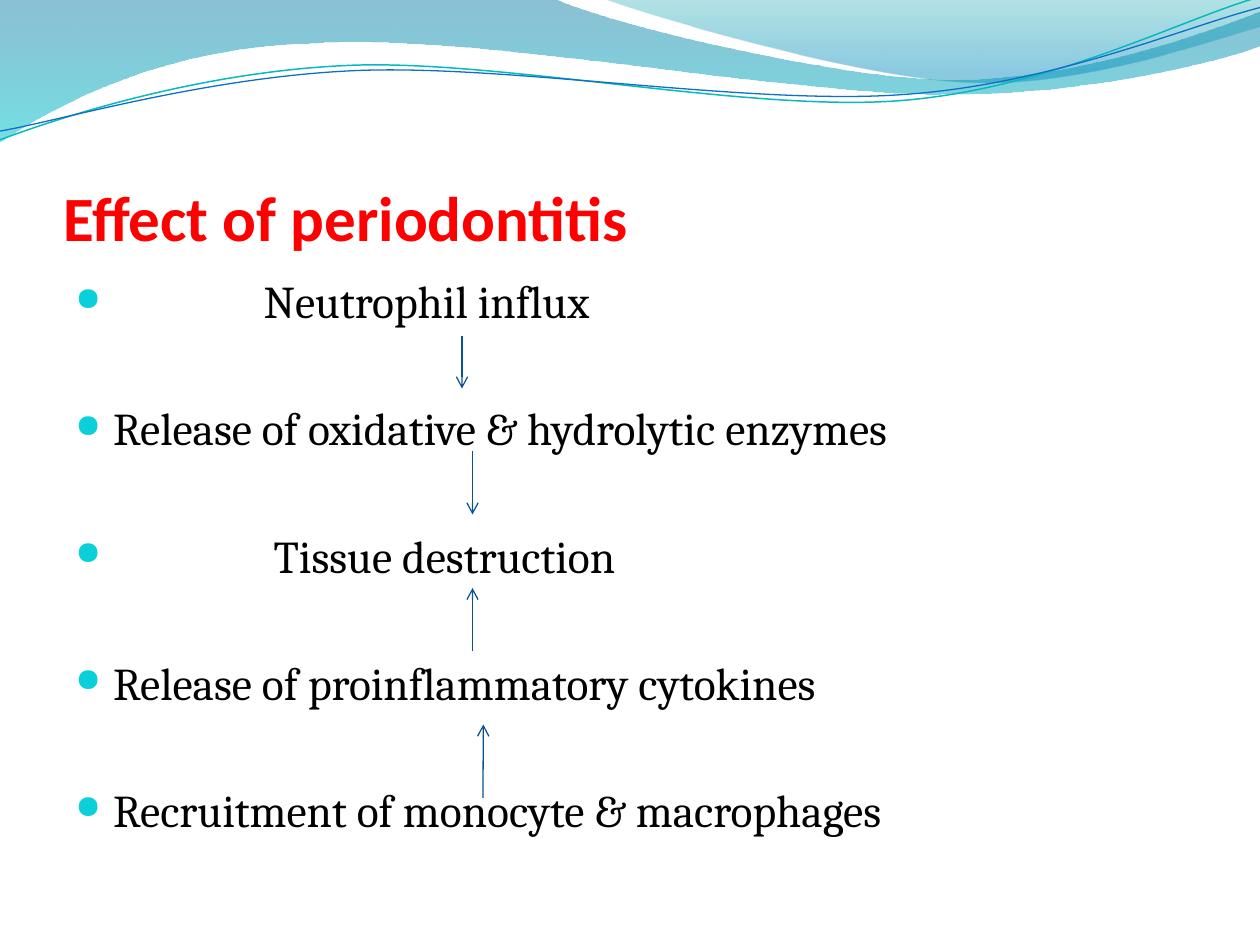
from lxml import etree
from pptx import Presentation
from pptx import util as u
from pptx.dml.color import RGBColor
from pptx.enum import shapes, text
from pptx.oxml import ns

RED = RGBColor(0xFF, 0x00, 0x00)
BLACK = RGBColor(0x00, 0x00, 0x00)
ARROW_BLUE = RGBColor(0x09, 0x52, 0x95)
TEAL = RGBColor(0x0A, 0xB8, 0xBF)
BLUE = RGBColor(0x0F, 0x6F, 0xC6)
BULLET_TEAL = RGBColor(0x0B, 0xD0, 0xD9)
WIDE_TOP = RGBColor(0x00, 0x74, 0xA1)
WIDE_BOTTOM = RGBColor(0x00, 0xC6, 0xCF)
CREST_TOP = RGBColor(0x00, 0xA1, 0xA9)
CREST_BOTTOM = RGBColor(0x00, 0x8B, 0xBF)

HANGING = 21.6

WIDE_WAVE = [
    [(-0.7, -0.7)], [(316.8, -0.7)],
    [(342.7, 12.2), (478.1, 45.4), (545.8, 45.4)],
    [(614.2, 45.4), (689.8, 18.7), (720, 6.5)], [(720.7, 25.9)],
    [(707.8, 31.7), (626.4, 54.7), (537.1, 54)],
    [(447.8, 54), (275, 20.2), (185, 24.5)],
    [(92.9, 25.9), (33.1, 59.8), (-0.7, 81.4)],
]
CREST_WAVE = [
    [(344.9, -0.7)],
    [(366.5, 7.9), (491, 44.6), (553.7, 46.8)],
    [(616.3, 49.7), (691.9, 23), (720, 15.1)], [(720, 0)],
]
TEAL_WAVE = [
    [(0, 79.9)],
    [(34.6, 67), (113.8, 41), (199.4, 37.4)],
    [(284.4, 33.8), (427, 64.1), (513.4, 57.6)],
    [(599.8, 51.1), (675.4, 10.8), (718.6, -1.4)],
]
BLUE_WAVE = [
    [(0, 74.9)],
    [(33.8, 69.1), (118.1, 43.9), (203.8, 40.3)],
    [(290.2, 36.7), (429.8, 60.5), (516.2, 54)],
    [(601.9, 48.2), (677.5, 15.1), (720, 4.3)],
]
STEPS = [
    ("Neutrophil influx", 86),
    ("Release of oxidative & hydrolytic enzymes", 0),
    ("Tissue destruction", 91.7),
    ("Release of proinflammatory cytokines", 0),
    ("Recruitment of monocyte & macrophages", 0),
]
ARROWS = [(264, 192, 264, 222), (270, 258, 270, 294),
          (270, 372, 270, 336), (276, 456, 276.2, 414)]


def bend(wave, segments):
    """Turn each group of three line segments into one cubic curve."""
    lines = iter(list(wave._element.spPr.iter(ns.qn("a:lnTo"))))
    for segment in segments[1:]:
        group = [next(lines) for _ in segment]
        if len(group) == 3:
            curve = etree.Element(ns.qn("a:cubicBezTo"))
            group[0].addprevious(curve)
            for line in group:
                curve.append(line[0])
                line.getparent().remove(line)


def add_wave(page, segments, closed):
    """Draw an outline from line and curve segments."""
    vertices = [(u.Pt(x), u.Pt(y)) for segment in segments for x, y in segment]
    builder = page.shapes.build_freeform(*vertices[0])
    builder.add_line_segments(vertices[1:], close=closed)
    wave = builder.convert_to_shape()
    wave.shadow.inherit = False
    bend(wave, segments)
    return wave


def add_filled_wave(page, segments, stops):
    """Add a wave with a translucent vertical gradient."""
    wave = add_wave(page, segments, True)
    wave.line.fill.background()
    wave.fill.gradient()
    wave.fill.gradient_angle = 270
    for stop, (position, color, _) in zip(wave.fill.gradient_stops, stops):
        stop.position = position
        stop.color.rgb = color
    colors = wave._element.spPr.iter(ns.qn("a:srgbClr"))
    for element, (_, _, opacity) in zip(colors, stops):
        etree.SubElement(element, ns.qn("a:alpha"), val=str(opacity * 1000))


def add_line_wave(page, segments, color, width):
    """Add an open wave line."""
    wave = add_wave(page, segments, False)
    wave.fill.background()
    wave.line.color.rgb = color
    wave.line.width = u.Pt(width)


def add_span(para, words, font, size, color, bold=False):
    """Add one formatted run."""
    span = para.add_run()
    span.text = words
    span.font.name = font
    span.font.size = u.Pt(size)
    span.font.color.rgb = color
    span.font.bold = bold


def format_title(page, words):
    """Place and write the title, in front of the waves."""
    box = page.shapes.title
    box.left, box.top, box.width, box.height = (u.Pt(n) for n in (36, 55.4, 648, 90))
    page.shapes._spTree.append(box._element)
    frame = box.text_frame
    frame.margin_left = frame.margin_right = frame.margin_bottom = 0
    frame.margin_top = u.Pt(3.6)
    frame.vertical_anchor = text.MSO_ANCHOR.BOTTOM
    frame.auto_size = text.MSO_AUTO_SIZE.NONE
    para = frame.paragraphs[0]
    para.alignment = text.PP_ALIGN.LEFT
    add_span(para, words, "Calibri", 36, RED, True)


def set_bullet(para, offset):
    """Give a paragraph a round bullet and a hanging indent."""
    margin = u.Pt(HANGING + offset)
    properties = para._p.get_or_add_pPr()
    properties.set("marL", str(margin))
    properties.set("indent", str(-margin))
    color = etree.SubElement(properties, ns.qn("a:buClr"))
    etree.SubElement(color, ns.qn("a:srgbClr"), val=str(BULLET_TEAL))
    etree.SubElement(properties, ns.qn("a:buSzPct"), val="71000")
    etree.SubElement(properties, ns.qn("a:buChar"), char="●")


def add_steps(page, steps):
    """Add the bulleted chain of events."""
    box = page.shapes.add_textbox(u.Pt(36), u.Pt(152.6), u.Pt(648), u.Pt(345.6))
    frame = box.text_frame
    frame.word_wrap = True
    for number, (words, offset) in enumerate(steps):
        para = frame.add_paragraph() if number else frame.paragraphs[0]
        para.space_before = u.Pt(41.5 if number else 5.2)
        set_bullet(para, offset)
        add_span(para, words, "Cambria", 26, BLACK)


def add_arrow(page, ends):
    """Add a thin line with an open arrowhead."""
    arrow = page.shapes.add_connector(shapes.MSO_CONNECTOR.STRAIGHT, *(u.Pt(n) for n in ends))
    arrow.line.color.rgb = ARROW_BLUE
    arrow.line.width = u.Pt(0.75)
    etree.SubElement(arrow.line._get_or_add_ln(), ns.qn("a:tailEnd"), type="arrow")
    etree.SubElement(arrow._element.spPr, ns.qn("a:effectLst"))


def main():
    """Build the slide."""
    deck = Presentation()
    deck.slide_width, deck.slide_height = u.Pt(720), u.Pt(540)
    page = deck.slides.add_slide(deck.slide_layouts[5])
    add_filled_wave(page, WIDE_WAVE, [(0, WIDE_TOP, 45), (1, WIDE_BOTTOM, 55)])
    add_filled_wave(page, CREST_WAVE, [(0, CREST_TOP, 30), (0.8, CREST_BOTTOM, 45)])
    add_line_wave(page, TEAL_WAVE, TEAL, 0.85)
    add_line_wave(page, BLUE_WAVE, BLUE, 0.75)
    format_title(page, "Effect of periodontitis")
    add_steps(page, STEPS)
    for ends in ARROWS:
        add_arrow(page, ends)
    deck.save("out.pptx")


if __name__ == "__main__":
    main()
